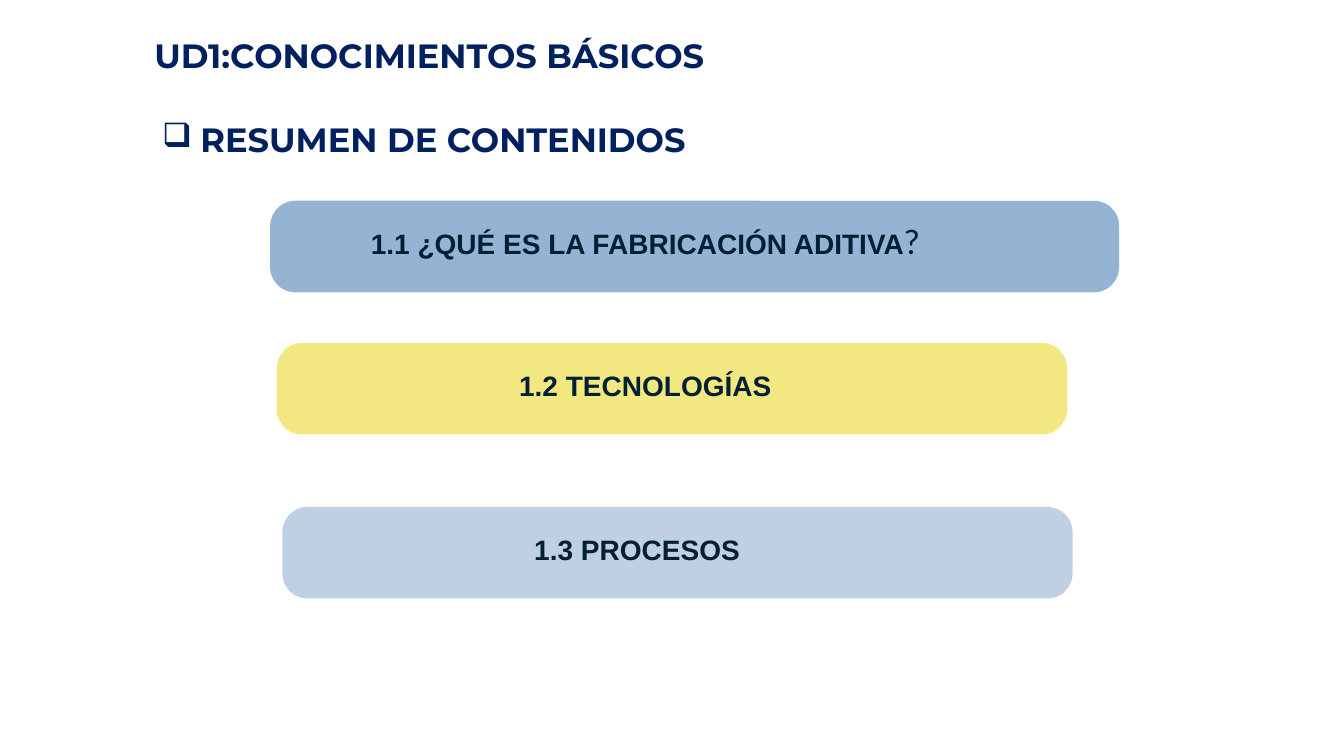
import pptx
import pptx.util
import pptx.dml.color
import pptx.enum.shapes
import pptx.enum.text
import pptx.oxml
import pptx.oxml.ns
from pptx.util import Pt

TITLE = "UD1:CONOCIMIENTOS BÁSICOS"
SUBTITLE = "RESUMEN DE CONTENIDOS"
SECTIONS = [
    {"runs": [("1.1 ¿QUÉ ES LA FABRICACIÓN ADITIVA", "section"), ("?", "mark")],
     "fill": "95B4D3", "band": (193, 143.4, 606.4), "label": (264.2, 156.2, 583.2, 30)},
    {"runs": [("1.2 TECNOLOGÍAS", "section")],
     "fill": "F2E780", "band": (197.8, 244.9, 564.4), "label": (370.1, 262.1, 297.4, 25.2)},
    {"runs": [("1.3 PROCESOS", "section")],
     "fill": "BED0E1", "band": (201.7, 362.1, 564.4), "label": (380.9, 378.7, 299.5, 25.2)},
]
BAND_HEIGHT = 65.4
BAND_RADIUS = 18

THEME = {
    "heading": ("Montserrat", 24, True, "002060"),
    "section": ("Arial", 20, True, "012033"),
    "mark": ("Lato", 24, False, "012033"),
}


def rgb(color):
    return pptx.dml.color.RGBColor.from_string(color)


def style(r, role):
    name, size, bold, color = THEME[role]
    r.font.name = name
    r.font.size = Pt(size)
    r.font.bold = bold
    r.font.color.rgb = rgb(color)


def set_frame(tf, margins, anchor):
    tf.word_wrap = True
    tf.vertical_anchor = anchor
    tf.margin_left, tf.margin_top, tf.margin_right, tf.margin_bottom = map(Pt, margins)


def add_label(s, box, runs, top_margin, anchor):
    tf = s.shapes.add_textbox(*map(Pt, box)).text_frame
    set_frame(tf, (0, top_margin, 0, 0), anchor)
    p = tf.paragraphs[0]
    for text, role in runs:
        r = p.add_run()
        r.text = text
        style(r, role)
    return p


def add_title(s):
    sp = s.shapes.title
    sp.left, sp.top, sp.width, sp.height = map(Pt, (103, 11.5, 505.4, 59))
    tf = sp.text_frame
    tf.text = TITLE
    set_frame(tf, (7.2, 3.6, 7.2, 3.6), pptx.enum.text.MSO_ANCHOR.MIDDLE)
    p = tf.paragraphs[0]
    p.alignment = pptx.enum.text.PP_ALIGN.LEFT
    p.line_spacing = 0.9
    style(p.runs[0], "heading")


def add_subtitle(s):
    p = add_label(s, (115.2, 83.5, 583.9, 31), [(SUBTITLE, "heading")], 0.7,
                  pptx.enum.text.MSO_ANCHOR.MIDDLE)
    pPr = p._p.get_or_add_pPr()
    pPr.set("marL", str(Pt(28)))
    pPr.set("indent", str(Pt(-27.4)))
    ns = pptx.oxml.ns.nsdecls("a")
    color = THEME["heading"][3]
    for xml in (f'<a:buClr {ns}><a:srgbClr val="{color}"/></a:buClr>',
                f'<a:buChar {ns} char="❑"/>'):
        pPr.append(pptx.oxml.parse_xml(xml))


def add_section(s, section):
    left, top, width = section["band"]
    sp = s.shapes.add_shape(pptx.enum.shapes.MSO_SHAPE.ROUNDED_RECTANGLE,
                            Pt(left), Pt(top), Pt(width), Pt(BAND_HEIGHT))
    sp.adjustments[0] = BAND_RADIUS / BAND_HEIGHT
    sp.shadow.inherit = False
    sp.fill.solid()
    sp.fill.fore_color.rgb = rgb(section["fill"])
    sp.line.fill.background()
    p = add_label(s, section["label"], section["runs"], 1.4, pptx.enum.text.MSO_ANCHOR.TOP)
    p._p.get_or_add_pPr().set("marL", str(Pt(0.7)))


def main():
    prs = pptx.Presentation()
    prs.slide_width, prs.slide_height = Pt(960), Pt(540)
    s = prs.slides.add_slide(prs.slide_layouts.get_by_name("Title Only"))
    add_title(s)
    add_subtitle(s)
    for section in SECTIONS:
        add_section(s, section)
    prs.save("out.pptx")


if __name__ == "__main__":
    main()
